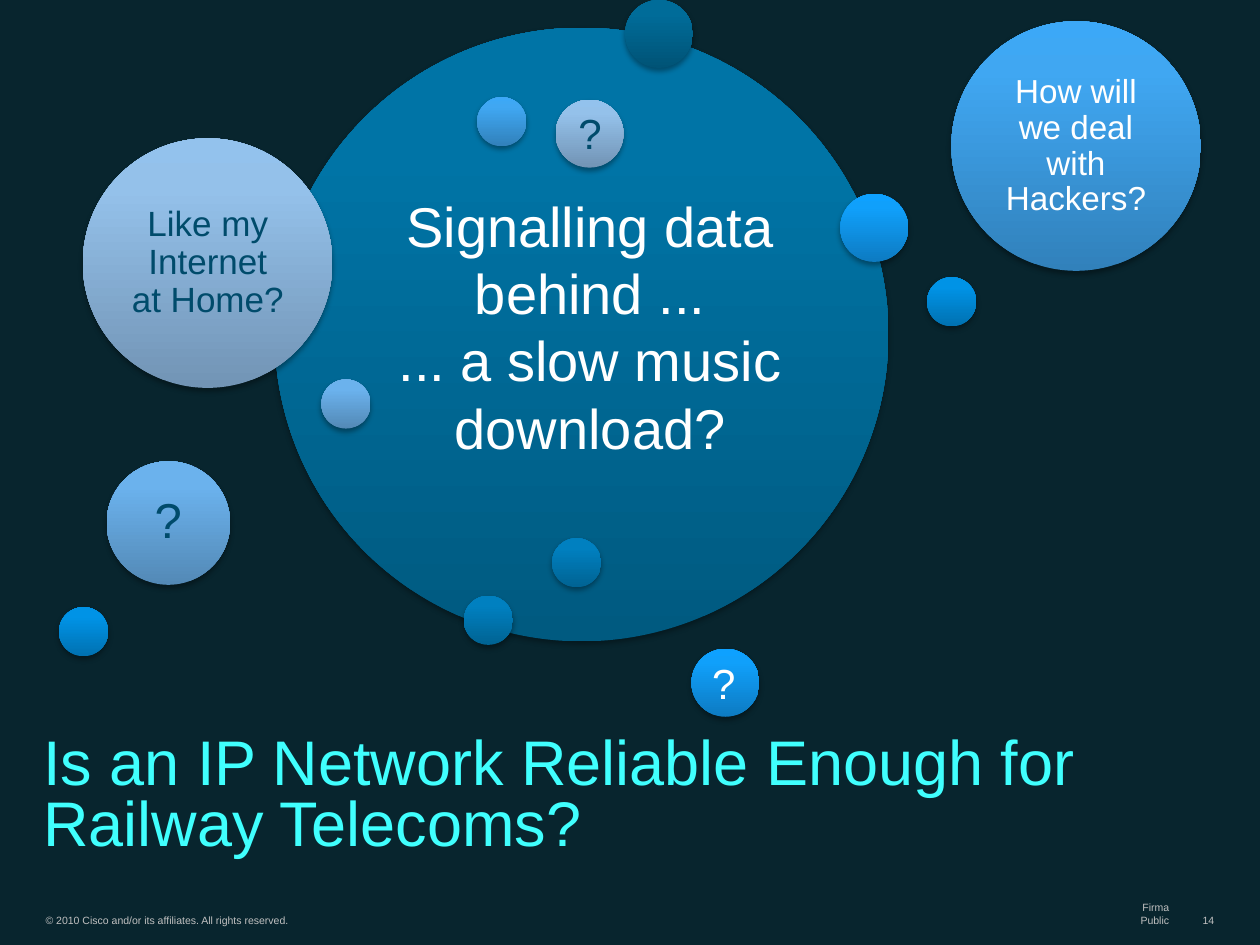
from lxml import etree
from pptx import Presentation, util as u
from pptx.dml.color import RGBColor
from pptx.enum import shapes, text
from pptx.oxml import ns, parse_xml

THEME = {
    "font": "Arial",
    "background": "08252E",
    "color": {"title": "40FFFE", "light": "FFFFFF", "dark": "004B6B", "footer": "C0C0C0"},
    "size": {"title": 36, "main": 32, "query": 28, "small query": 24,
             "home": 20, "hackers": 19, "footer": 6},
    # gradient stops at 0, 80 and 100 %, running upwards
    "gradient": {
        "deep": ("005A80", "0074A6", "0075A7"),
        "night": ("005376", "006C99", "006C9A"),
        "ocean": ("006393", "0080C0", "0081C0"),
        "azure": ("0071B1", "0093E6", "0094E7"),
        "bright": ("0D7BC2", "10A0FB", "0EA1FF"),
        "sky": ("3181BB", "40A7F2", "3CA8F7"),
        "pale": ("5389B6", "6BB2ED", "69B3F0"),
        "mist": ("7294B5", "94C1EA", "93C2ED"),
    },
}
DIAMETER = {"huge": 12.37, "large": 5.03, "medium": 2.49, "small": 1.37, "tiny": 0.99}

# Bubbles from back to front: gradient, size, left, top (cm)
BUBBLES = [
    ("deep", "huge", 5.54, 0.56),
    ("night", "small", 12.6, 0),
    ("ocean", "tiny", 9.35, 12.01),
    ("azure", "tiny", 18.69, 5.59),
    ("bright", "small", 13.94, 13.08),
    ("sky", "tiny", 9.62, 1.96),
    ("pale", "tiny", 6.48, 7.65),
    ("mist", "large", 1.67, 2.79),
    ("mist", "small", 11.2, 2.01),
    ("pale", "medium", 2.15, 9.3),
    ("sky", "large", 19.18, 0.43),
    ("bright", "small", 16.94, 3.91),
    ("azure", "tiny", 1.19, 12.24),
    ("ocean", "tiny", 11.13, 10.85),
]

# Paragraph and frame formats
LEFT, CENTER, RIGHT = text.PP_ALIGN.LEFT, text.PP_ALIGN.CENTER, text.PP_ALIGN.RIGHT
TOP, MIDDLE, BOTTOM = text.MSO_ANCHOR.TOP, text.MSO_ANCHOR.MIDDLE, text.MSO_ANCHOR.BOTTOM
FORMATS = {
    "title": {"para": {"alignment": LEFT, "line_spacing": 0.8},
              "frame": {"vertical_anchor": BOTTOM, "word_wrap": True}, "inset": (0.23, 0.13)},
    "caption": {"para": {"alignment": CENTER, "line_spacing": 0.9},
                "frame": {"vertical_anchor": MIDDLE, "word_wrap": True}, "inset": (0.2, 0.2)},
    "label": {"para": {"alignment": CENTER},
              "frame": {"vertical_anchor": TOP, "word_wrap": True}, "inset": (0.25, 0.13)},
    "copyright": {"para": {"alignment": LEFT},
                  "frame": {"vertical_anchor": BOTTOM, "word_wrap": True}, "inset": (0.23, 0.1)},
    "footer": {"para": {"alignment": RIGHT},
               "frame": {"vertical_anchor": BOTTOM, "word_wrap": False}, "inset": (0.23, 0.1)},
}

# Texts: wording, format, size, colour, (left, top, width, height) in cm
FOOTERS = [
    ("© 2010 Cisco and/or its affiliates. All rights reserved.", "copyright", "footer", "footer",
     (0.69, 18.29, 9.5, 0.48)),
    ("Firma Public", "footer", "footer", "footer", (22.17, 18.29, 1.63, 0.48)),
    ("14", "footer", "footer", "footer", (24, 18.29, 0.71, 0.48)),
]
TITLE = ("Is an IP Network Reliable Enough for Railway Telecoms?", "title", "title", "title",
         (0.64, 15.09, 23.77, 2.34))
LABELS = [
    ("Like my Internet at Home?", "caption", "home", "dark", (2.41, 3.53, 3.56, 3.56)),
    ("How will we deal with Hackers?", "caption", "hackers", "light", (19.91, 1.17, 3.56, 3.56)),
    ("?", "label", "query", "dark", (2.49, 9.73, 1.8, 1.45)),
    ("?", "label", "small query", "light", (13.89, 13.13, 1.4, 1.27)),
    ("?", "label", "small query", "dark", (11.3, 2.03, 1.19, 1.27)),
    ("Signalling data behind ...\v... a slow music download?", "label", "main", "light",
     (6.5, 3.73, 10.8, 6.5)),
]


def apply(target, values):
    for name, value in values.items():
        setattr(target, name, value)


def add_text(page, wording, style, size, color, place):
    box = page.shapes.add_textbox(*map(u.Cm, place))
    frame, look = box.text_frame, FORMATS[style]
    across, down = map(u.Cm, look["inset"])
    apply(frame, {**look["frame"], "margin_left": across, "margin_right": across,
                  "margin_top": down, "margin_bottom": down})
    para = frame.paragraphs[0]
    para.text = wording
    apply(para, look["para"])
    for span in para.runs:
        apply(span.font, {"name": THEME["font"], "size": u.Pt(THEME["size"][size])})
        span.font.color.rgb = RGBColor.from_string(THEME["color"][color])


def add_bubble(page, gradient, size, left, top):
    side = u.Cm(DIAMETER[size])
    bubble = page.shapes.add_shape(shapes.MSO_SHAPE.OVAL, u.Cm(left), u.Cm(top), side, side)
    bubble.line.fill.background()
    # Three-stop gradient
    bubble.fill.gradient()
    bubble.fill.gradient_angle = 90
    stops = bubble.element.spPr.find(".//" + ns.qn("a:gsLst"))
    stops.clear()
    for position, color in zip((0, 80, 100), THEME["gradient"][gradient]):
        stop = etree.SubElement(stops, ns.qn("a:gs"), pos=str(position * 1000))
        etree.SubElement(stop, ns.qn("a:srgbClr"), val=color)
    # Soft shadow below
    bubble.element.spPr.append(parse_xml(
        f'<a:effectLst {ns.nsdecls("a")}>'
        f'<a:outerShdw blurRad="{u.Pt(3.1)}" dist="{u.Pt(1.8)}" dir="5400000" rotWithShape="0">'
        '<a:srgbClr val="000000"><a:alpha val="35000"/></a:srgbClr>'
        '</a:outerShdw></a:effectLst>'))


def main():
    deck = Presentation()
    deck.slide_width, deck.slide_height = u.Cm(25.4), u.Cm(19.05)
    page = deck.slides.add_slide(deck.slide_layouts[6])
    page.background.fill.solid()
    page.background.fill.fore_color.rgb = RGBColor.from_string(THEME["background"])
    for item in [*FOOTERS, TITLE]:
        add_text(page, *item)
    for bubble in BUBBLES:
        add_bubble(page, *bubble)
    for label in LABELS:
        add_text(page, *label)
    deck.save("out.pptx")


if __name__ == "__main__":
    main()
